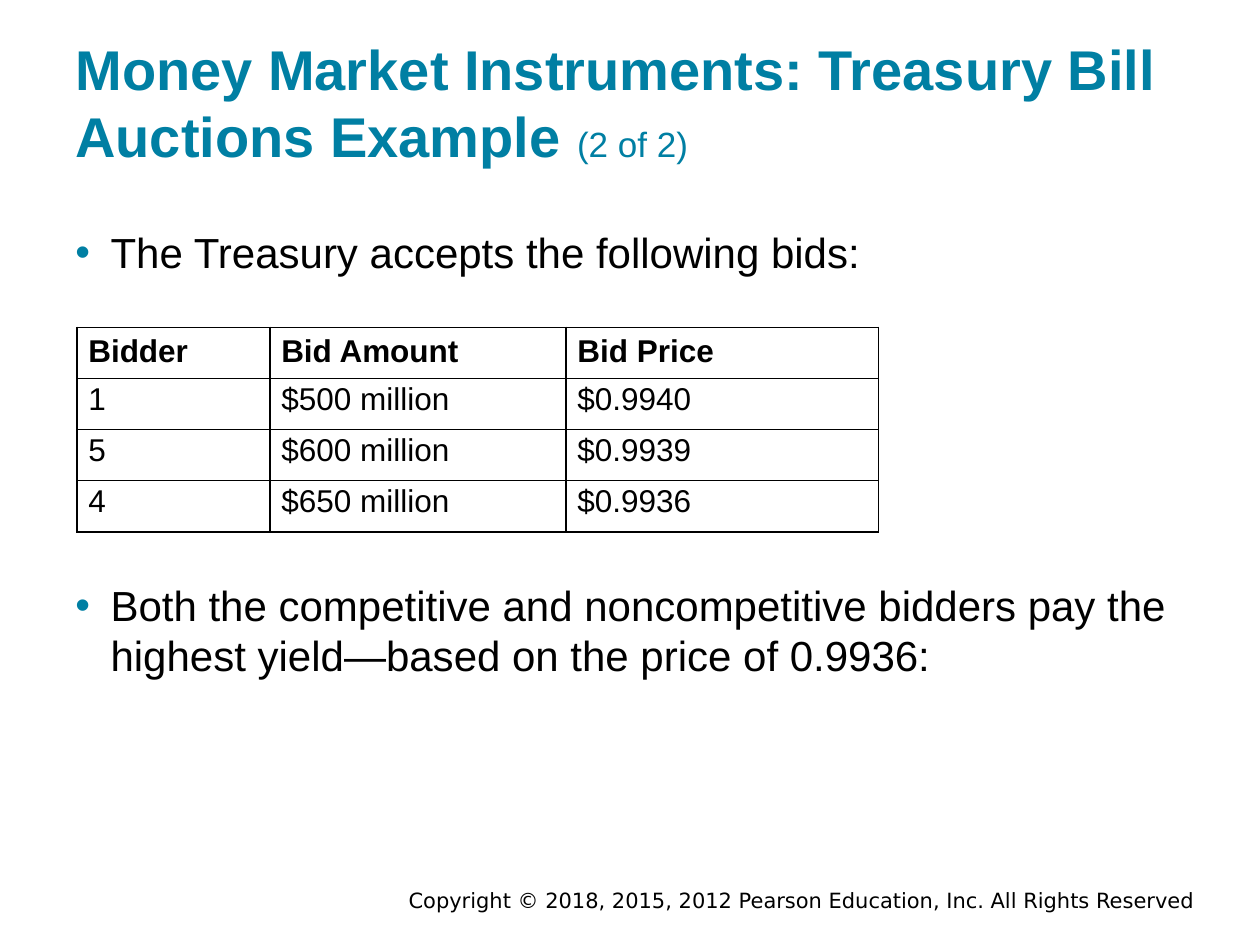
import pptx
import pptx.util
import pptx.dml.color
import pptx.enum.text
import pptx.oxml
import pptx.oxml.ns

Cm, Pt = pptx.util.Cm, pptx.util.Pt
Align, Anchor = pptx.enum.text.PP_ALIGN, pptx.enum.text.MSO_ANCHOR
HUES = {"teal": "007FA3", "ink": "000000", "paper": "FFFFFF"}
NS = pptx.oxml.ns.nsdecls("a")
ROWS = [
    ["Bidder", "Bid Amount", "Bid Price"],
    ["1", "$500 million", "$0.9940"],
    ["5", "$600 million", "$0.9939"],
    ["4", "$650 million", "$0.9936"],
]


def paint(hue):
    return pptx.dml.color.RGBColor.from_string(HUES[hue])


def apply(item, form):
    for key, value in form.items():
        setattr(item, key, value)


def write(para, text, size, hue="ink", bold=False, name="Arial"):
    run = para.add_run()
    run.text = text
    apply(run.font, {"size": Pt(size), "bold": bold, "name": name})
    run.font.color.rgb = paint(hue)


def frame(slide, box, pad, anchor):
    text = slide.shapes.add_textbox(*map(Cm, box)).text_frame
    apply(text, {
        "word_wrap": True,
        "vertical_anchor": anchor,
        "margin_left": Cm(0.25),
        "margin_right": Cm(0.25),
        "margin_top": Cm(pad),
        "margin_bottom": Cm(pad),
    })
    return text.paragraphs[0]


def title(slide, box):
    para = frame(slide, box, 0.25, Anchor.BOTTOM)
    write(para, "Money Market Instruments: Treasury Bill Auctions Example ", 32, "teal", True)
    write(para, "(2 of 2)", 20, "teal")


def bullet(slide, box, text):
    para = frame(slide, box, 0.25, Anchor.TOP)
    props = para._p.get_or_add_pPr()
    props.set("marL", str(Cm(0.71)))
    props.set("indent", str(-Cm(0.71)))
    for part in (
        f'<a:buClr {NS}><a:srgbClr val="{HUES["teal"]}"/></a:buClr>',
        f'<a:buFont {NS} typeface="Arial"/>',
        f'<a:buChar {NS} char="•"/>',
    ):
        props.append(pptx.oxml.parse_xml(part))
    write(para, text, 24)


def border(cell):
    props = cell._tc.get_or_add_tcPr()
    for spot, side in enumerate(("lnL", "lnR", "lnT", "lnB")):
        props.insert(spot, pptx.oxml.parse_xml(
            f'<a:{side} {NS} w="{Pt(1)}"><a:solidFill>'
            f'<a:srgbClr val="{HUES["ink"]}"/></a:solidFill></a:{side}>'))


def bids(slide, box, widths):
    grid = slide.shapes.add_table(len(ROWS), len(widths), *map(Cm, box)).table
    apply(grid, {"first_row": False, "horz_banding": False})
    for col, width in zip(grid.columns, widths):
        col.width = Cm(width)
    for r, row in enumerate(ROWS):
        grid.rows[r].height = Cm(box[3] / len(ROWS))
        for c, text in enumerate(row):
            cell = grid.cell(r, c)
            apply(cell, {
                "margin_left": Cm(0.23),
                "margin_right": Cm(0.23),
                "margin_top": Cm(0.13),
                "margin_bottom": Cm(0.13),
            })
            cell.fill.solid()
            cell.fill.fore_color.rgb = paint("paper")
            border(cell)
            para = cell.text_frame.paragraphs[0]
            if r:
                para.line_spacing = 0.9
            write(para, text, 18, bold=r == 0)


def footer(slide, box):
    para = frame(slide, box, 0.13, Anchor.MIDDLE)
    para.alignment = Align.RIGHT
    write(para, "Copyright © 2018, 2015, 2012 Pearson Education, Inc. All Rights Reserved",
          12, name="DejaVu Sans")


def main():
    deck = pptx.Presentation()
    apply(deck, {"slide_width": Cm(25.4), "slide_height": Cm(19.05)})
    slide = deck.slides.add_slide(deck.slide_layouts[6])
    footer(slide, (4.45, 17.86, 19.89, 0.56))
    title(slide, (1.27, 0.61, 22.86, 3.05))
    bullet(slide, (1.27, 4.32, 22.45, 1.57), "The Treasury accepts the following bids:")
    bids(slide, (1.55, 6.6, 16.16, 4.12), (3.89, 5.97, 6.3))
    bullet(slide, (1.27, 11.43, 23.27, 3.12),
           "Both the competitive and noncompetitive bidders pay the highest yield—"
           "based on the price of 0.9936:")
    deck.save("out.pptx")


if __name__ == "__main__":
    main()
